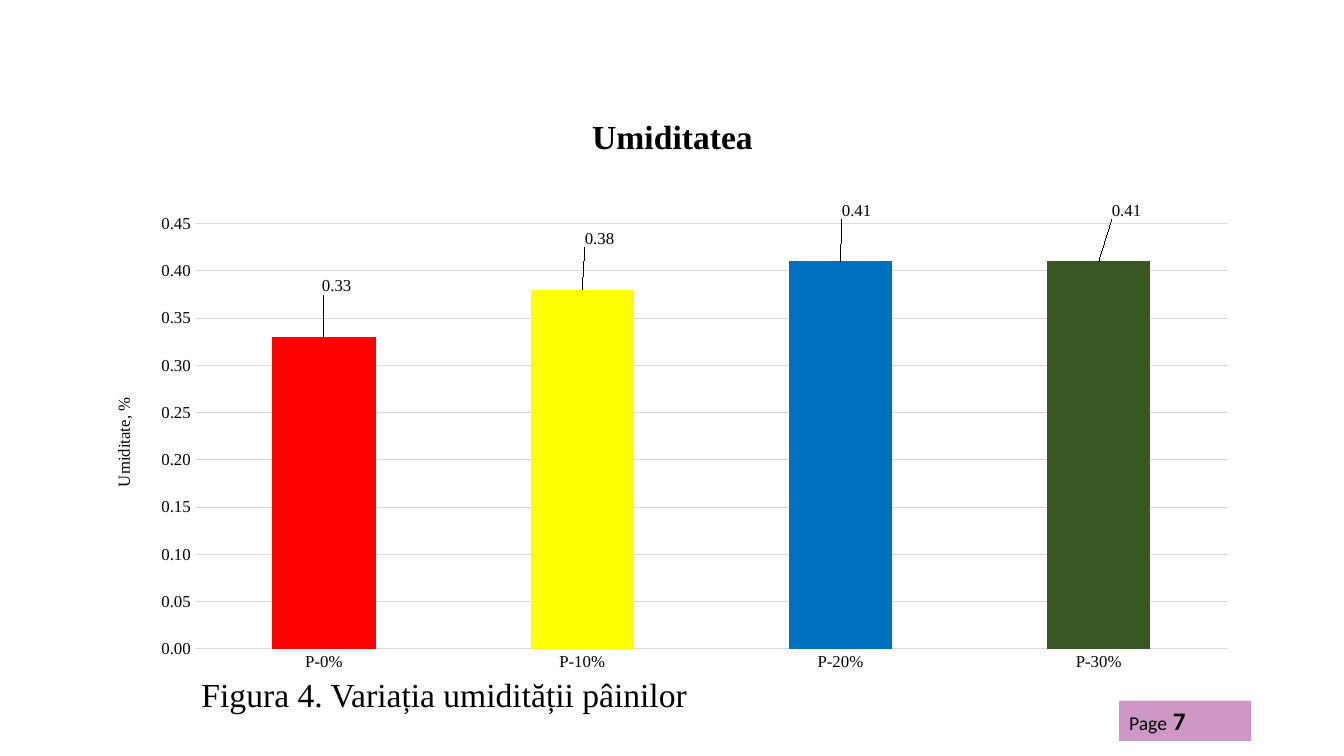
from lxml import etree
from pptx import Presentation
from pptx import util as u
from pptx.chart.data import CategoryChartData
from pptx.dml.color import RGBColor
from pptx.enum import chart as charts, shapes, text
from pptx.oxml import parse_xml
from pptx.oxml.ns import nsdecls, qn

COLORS = {"ink": "000000", "grid": "D9D9D9", "badge": "9F318D", "series": "4472C4"}
SERIF, SANS = "Times New Roman", "Calibri"

# category, moisture, bar colour, label shift (fractions of the chart size)
BREADS = [
    ("P-0%", 0.33, "FF0000", (0.011, -0.08)),
    ("P-10%", 0.38, "FFFF00", (0.015, -0.08)),
    ("P-20%", 0.41, "0070C0", (0.014, -0.08)),
    ("P-30%", 0.41, "385723", (0.024, -0.08)),
]


def rgb(value):
    return RGBColor.from_string(value)


def manual_layout(**settings):
    """Build a c:layout element from its settings, kept in order."""
    items = "".join(f'<c:{key} val="{value}"/>' for key, value in settings.items())
    return parse_xml(f'<c:layout {nsdecls("c")}><c:manualLayout>{items}'
                     '</c:manualLayout></c:layout>')


class SlideBuilder:
    def __init__(self, slide):
        self.slide = slide

    def style(self, font, face=SERIF, size=12, bold=False):
        font.name, font.size, font.bold = face, u.Pt(size), bold
        font.color.rgb = rgb(COLORS["ink"])

    def add_run(self, paragraph, words, **style):
        run = paragraph.add_run()
        run.text = words
        self.style(run.font, **style)

    def text_box(self, box, words, align=text.PP_ALIGN.LEFT,
                 anchor=text.MSO_ANCHOR.TOP, **style):
        frame = self.slide.shapes.add_textbox(*map(u.Inches, box)).text_frame
        frame.word_wrap = True
        frame.vertical_anchor = anchor
        paragraph = frame.paragraphs[0]
        paragraph.alignment = align
        self.add_run(paragraph, words, **style)
        return frame

    def page_badge(self, box, number):
        badge = self.slide.shapes.add_shape(shapes.MSO_SHAPE.RECTANGLE,
                                            *map(u.Inches, box))
        badge.shadow.inherit = False
        badge.line.fill.background()
        badge.fill.solid()
        badge.fill.fore_color.rgb = rgb(COLORS["badge"])
        color = badge.fill._xPr.find(".//" + qn("a:srgbClr"))
        etree.SubElement(color, qn("a:alpha"), val="50000")
        paragraph = badge.text_frame.paragraphs[0]
        paragraph.alignment = text.PP_ALIGN.LEFT
        self.add_run(paragraph, "Page", face=SANS, size=14)
        self.add_run(paragraph, f" {number}", face=SANS, size=18, bold=True)

    def moisture_chart(self, box):
        data = CategoryChartData(number_format="0.00")
        data.categories = [bread[0] for bread in BREADS]
        data.add_series("Series 1", [bread[1] for bread in BREADS])
        chart = self.slide.shapes.add_chart(
            charts.XL_CHART_TYPE.COLUMN_CLUSTERED, *map(u.Inches, box), data).chart
        self.style(chart.font, face=SANS, size=10)
        chart.has_legend = chart.has_title = False
        plot = chart.plots[0]
        plot.gap_width = 150
        plot.vary_by_categories = False
        self.axes(chart)
        self.bars(plot.series[0])
        plot_area = chart._chartSpace.find(".//" + qn("c:plotArea"))
        for old in plot_area.findall(qn("c:layout")):
            plot_area.remove(old)
        plot_area.insert(0, manual_layout(
            layoutTarget="inner", xMode="edge", yMode="edge",
            x=0.088, y=0.038, w=0.891, h=0.894))

    def axes(self, chart):
        for axis in (chart.category_axis, chart.value_axis):
            axis.major_tick_mark = axis.minor_tick_mark = charts.XL_TICK_MARK.NONE
            axis.format.line.fill.background()
            self.style(axis.tick_labels.font)
        moisture = chart.value_axis
        moisture.minimum_scale, moisture.maximum_scale = 0, 0.45
        moisture.major_unit = 0.05
        moisture.tick_labels.number_format = "0.00"
        moisture.tick_labels.number_format_is_linked = False
        grid = moisture.major_gridlines.format.line
        grid.color.rgb = rgb(COLORS["grid"])
        grid.width = u.Pt(0.75)
        self.add_run(moisture.axis_title.text_frame.paragraphs[0], "Umiditate, %")

    def bars(self, series):
        series.format.fill.solid()
        series.format.fill.fore_color.rgb = rgb(COLORS["series"])
        labels = series.data_labels
        labels.show_value = True
        labels.number_format = "0.00"
        labels.number_format_is_linked = False
        labels.position = charts.XL_LABEL_POSITION.OUTSIDE_END
        self.style(labels.font)
        for index, (_, _, color, _) in enumerate(BREADS):
            point = series.points[index]
            point.format.fill.solid()
            point.format.fill.fore_color.rgb = rgb(color)
            point.data_label.position = charts.XL_LABEL_POSITION.OUTSIDE_END
            self.style(point.data_label.font)
        for label, bread in zip(series._element.iter(qn("c:dLbl")), BREADS):
            x, y = bread[3]
            label.insert(1, manual_layout(x=x, y=y))
            label.insert(2, parse_xml(f'<c:numFmt {nsdecls("c")} formatCode="0.00" '
                                      'sourceLinked="0"/>'))


def main():
    deck = Presentation()
    deck.slide_width, deck.slide_height = u.Inches(13.33), u.Inches(7.5)
    builder = SlideBuilder(deck.slides.add_slide(deck.slide_layouts[6]))
    title = builder.text_box((0.92, 0.91, 11.5, 0.94), "Umiditatea",
                             text.PP_ALIGN.CENTER, text.MSO_ANCHOR.MIDDLE,
                             size=24, bold=True)
    title.paragraphs[0].line_spacing = 0.9
    builder.page_badge((11.1, 6.95, 1.31, 0.4), 7)
    builder.moisture_chart((0.92, 2, 11.5, 4.76))
    caption = builder.text_box((1.9, 6.64, 8.78, 0.81),
                               "Figura 4. Variația umidității pâinilor", size=24)
    caption.auto_size = text.MSO_AUTO_SIZE.SHAPE_TO_FIT_TEXT
    deck.save("out.pptx")


if __name__ == "__main__":
    main()
